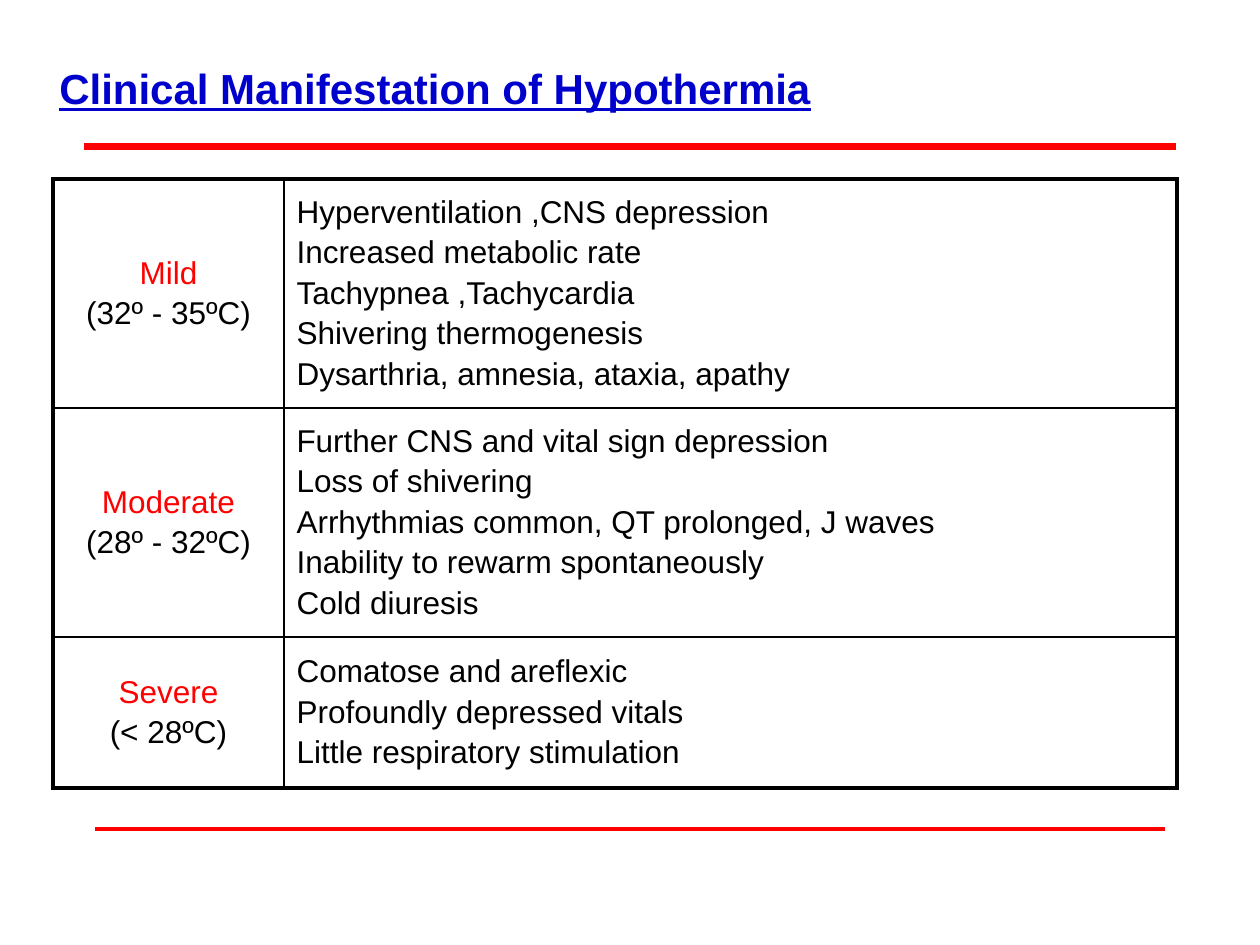
from lxml import etree
from pptx import Presentation
from pptx import util as u
from pptx.dml import color
from pptx.enum import shapes, text
from pptx.oxml import ns

PX = 914400 / 126
RED, BLUE, BLACK = "FF0000", "0000CC", "000000"
THICK, THIN = 2.25, 1
STAGES = [
    ("Mild", "(32º - 35ºC)", [
        "Hyperventilation ,CNS depression",
        "Increased metabolic rate",
        "Tachypnea ,Tachycardia",
        "Shivering thermogenesis",
        "Dysarthria, amnesia, ataxia, apathy",
    ]),
    ("Moderate", "(28º - 32ºC)", [
        "Further CNS and vital sign depression",
        "Loss of shivering",
        "Arrhythmias common, QT prolonged, J waves",
        "Inability to rewarm spontaneously",
        "Cold diuresis",
    ]),
    ("Severe", "(< 28ºC)", [
        "Comatose and areflexic",
        "Profoundly depressed vitals",
        "Little respiratory stimulation",
    ]),
]


def px(length):
    """Turn px into EMU."""
    return u.Emu(round(length * PX))


def rgb(hex_code):
    """Turn a hex string into a colour."""
    return color.RGBColor.from_string(hex_code)


def write(paragraph, words, size=18, colour=BLACK, bold=False, underline=False,
          align=text.PP_ALIGN.LEFT, before=0):
    """Put formatted words into a paragraph."""
    paragraph.alignment = align
    paragraph.space_before = u.Pt(before)
    run = paragraph.add_run()
    run.text = words
    font = run.font
    font.name, font.size = "Arial", u.Pt(size)
    font.bold, font.underline = bold, underline
    font.color.rgb = rgb(colour)


def add_rule(slide, left, right, y, weight):
    """Draw a horizontal red rule."""
    rule = slide.shapes.add_connector(
        shapes.MSO_CONNECTOR.STRAIGHT, px(left), px(y), px(right), px(y))
    rule.line.color.rgb = rgb(RED)
    rule.line.width = u.Pt(weight)
    etree.SubElement(rule._element.spPr, ns.qn("a:effectLst"))


def add_heading(slide, left, top, width, height):
    """Place and format the slide title."""
    heading = slide.shapes.title
    heading.left, heading.top = px(left), px(top)
    heading.width, heading.height = px(width), px(height)
    frame = heading.text_frame
    frame.margin_left = frame.margin_right = u.Inches(0.05)
    frame.margin_top = frame.margin_bottom = 0
    frame.vertical_anchor = text.MSO_ANCHOR.MIDDLE
    frame.auto_size = text.MSO_AUTO_SIZE.SHAPE_TO_FIT_TEXT
    write(frame.paragraphs[0], "Clinical Manifestation of Hypothermia",
          size=24, colour=BLUE, bold=True, underline=True)


def set_borders(cell, weights):
    """Draw the four cell borders with the given weights."""
    properties = cell._tc.get_or_add_tcPr()
    for side, weight in weights.items():
        border = etree.SubElement(
            properties, ns.qn(f"a:ln{side}"), w=str(u.Pt(weight)))
        fill = etree.SubElement(border, ns.qn("a:solidFill"))
        etree.SubElement(fill, ns.qn("a:srgbClr"), val=BLACK)


def fill_cell(cell, lines, align):
    """Write (words, colour) lines into a cell."""
    cell.fill.background()
    cell.vertical_anchor = text.MSO_ANCHOR.MIDDLE
    frame = cell.text_frame
    for index, (words, colour) in enumerate(lines):
        paragraph = frame.add_paragraph() if index else frame.paragraphs[0]
        write(paragraph, words, colour=colour, align=align, before=3)


def add_stages(slide, left, top, widths, heights):
    """Build the table of hypothermia stages and their signs."""
    table = slide.shapes.add_table(
        len(heights), len(widths), px(left), px(top),
        px(sum(widths)), px(sum(heights))).table
    table.first_row = table.horz_banding = False
    for column, width in zip(table.columns, widths):
        column.width = px(width)
    last = len(STAGES) - 1
    for index, (stage, temperature, signs) in enumerate(STAGES):
        table.rows[index].height = px(heights[index])
        label, findings = table.cell(index, 0), table.cell(index, 1)
        upper = THIN if index else THICK
        lower = THICK if index == last else THIN
        set_borders(label, {"L": THICK, "R": THIN, "T": upper, "B": lower})
        set_borders(findings, {"L": THIN, "R": THICK, "T": upper, "B": lower})
        fill_cell(label, [(stage, RED), (temperature, BLACK)],
                  text.PP_ALIGN.CENTER)
        fill_cell(findings, [(sign, BLACK) for sign in signs],
                  text.PP_ALIGN.LEFT)


def main():
    """Build and save the slide."""
    deck = Presentation()
    deck.slide_width, deck.slide_height = px(1260), px(945)
    slide = deck.slides.add_slide(deck.slide_layouts[5])
    add_rule(slide, 84, 1176, 147, 4)
    add_rule(slide, 95, 1165, 829, 2)
    add_heading(slide, 53, 63, 1134, 50)
    add_stages(slide, 53, 179, [231, 893], [229, 229, 151])
    deck.save("out.pptx")


if __name__ == "__main__":
    main()
